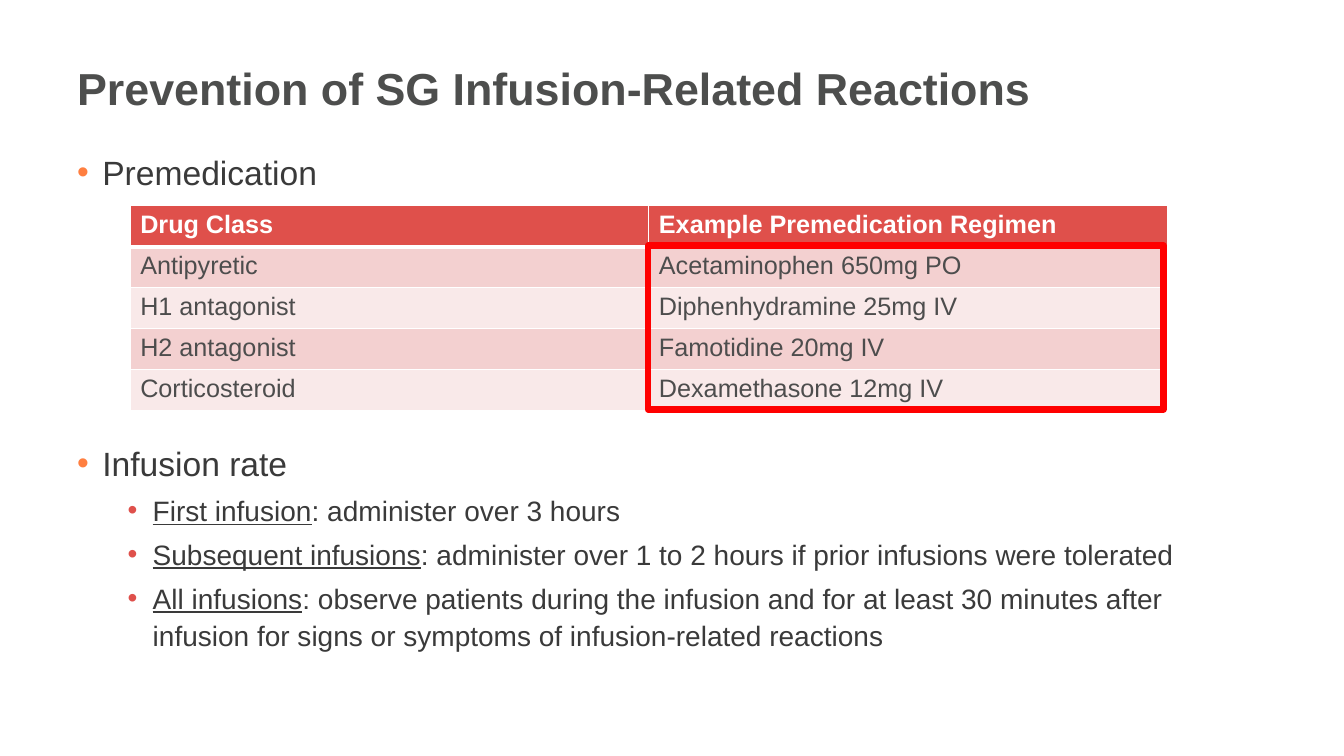
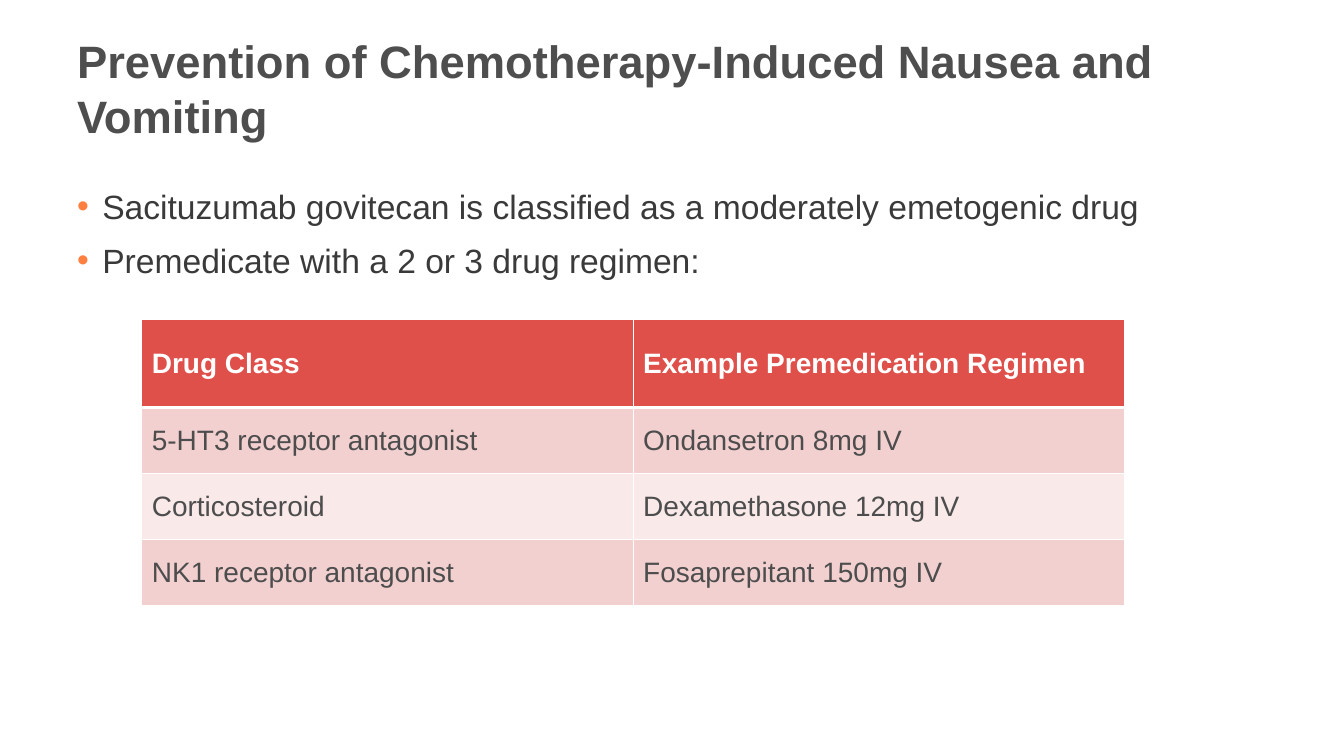
from lxml import etree
from pptx import Presentation
from pptx.dml.color import RGBColor
from pptx.enum.shapes import MSO_SHAPE
from pptx.enum.text import MSO_ANCHOR
from pptx.oxml.ns import qn
from pptx.util import Emu, Pt

RECTANGLE = MSO_SHAPE.RECTANGLE
TOP, MIDDLE = MSO_ANCHOR.TOP, MSO_ANCHOR.MIDDLE

SCALE = 9525
FONT = "Arial"
WHITE = "FFFFFF"
TITLE_GREY = "4D4E4D"
BODY_GREY = "3A3A3A"
CELL_GREY = "4D4D4D"
ORANGE = "FF7F40"
RED = "DF504B"
BANDS = ("F3D0D0", "F9E9E9")
HIGHLIGHT = "FF0000"

TITLE_BOX = (64, 21, 1128, 125)
LEVELS = (
    {"size": 24, "before": 10, "margin": 24, "bullet": ORANGE},
    {"size": 20, "before": 5, "margin": 72, "bullet": RED},
)
HANGING = 24
HEADINGS = ("Drug Class", "Example Premedication Regimen")


def px(value):
    return Emu(value * SCALE)


def place(box):
    return [px(value) for value in box]


def rgb(value):
    return RGBColor.from_string(value)


def set_values(target, values):
    for name, value in values.items():
        setattr(target, name, value)


def style_font(font, size, color, **extra):
    set_values(font, {"name": FONT, "size": Pt(size), **extra})
    font.color.rgb = rgb(color)


def add_color(parent, value):
    fill = etree.SubElement(parent, qn("a:solidFill"))
    etree.SubElement(fill, qn("a:srgbClr"), val=value)


def add_frame(slide, box, anchor):
    frame = slide.shapes.add_textbox(*place(box)).text_frame
    set_values(frame, {"word_wrap": True, "vertical_anchor": anchor})
    return frame


def add_title(slide, text, size):
    paragraph = add_frame(slide, TITLE_BOX, MIDDLE).paragraphs[0]
    paragraph.text = text
    style_font(paragraph.runs[0].font, size, TITLE_GREY, bold=True)


def add_bullet(paragraph, level):
    properties = paragraph._p.get_or_add_pPr()
    properties.set("marL", str(px(level["margin"])))
    properties.set("indent", str(-px(HANGING)))
    color = etree.SubElement(properties, qn("a:buClr"))
    etree.SubElement(color, qn("a:srgbClr"), val=level["bullet"])
    etree.SubElement(properties, qn("a:buFont"), typeface=FONT)
    etree.SubElement(properties, qn("a:buChar"), char="•")


def add_bullets(slide, box, items, line_spacing):
    frame = add_frame(slide, box, TOP)
    for index, (depth, lead, rest) in enumerate(items):
        level = LEVELS[depth]
        paragraph = frame.add_paragraph() if index else frame.paragraphs[0]
        add_bullet(paragraph, level)
        set_values(paragraph, {
            "level": depth,
            "line_spacing": line_spacing,
            "space_before": Pt(level["before"] if index else 0),
        })
        for text, underline in ((lead, True), (rest, False)):
            if text:
                run = paragraph.add_run()
                run.text = text
                style_font(run.font, level["size"], BODY_GREY, underline=underline)


def add_borders(cell, top, bottom):
    properties = cell._tc.get_or_add_tcPr()
    for side, width in (("L", 1), ("R", 1), ("T", top), ("B", bottom)):
        line = etree.SubElement(properties, qn(f"a:ln{side}"), w=str(Pt(width)))
        add_color(line, WHITE)


def add_regimen(slide, origin, column_width, row_heights, drugs, size, anchor):
    rows = (HEADINGS, *drugs)
    box = (*origin, column_width * len(HEADINGS), sum(row_heights))
    table = slide.shapes.add_table(len(rows), len(HEADINGS), *place(box)).table
    for column in table.columns:
        column.width = px(column_width)
    for index, (texts, height) in enumerate(zip(rows, row_heights)):
        heading = index == 0
        table.rows[index].height = px(height)
        for cell, text in zip(table.rows[index].cells, texts):
            add_borders(cell, 3 if index == 1 else 1, 3 if heading else 1)
            cell.fill.solid()
            cell.fill.fore_color.rgb = rgb(RED if heading else BANDS[(index - 1) % 2])
            set_values(cell, {"text": text, "vertical_anchor": anchor})
            style_font(cell.text_frame.paragraphs[0].runs[0].font, size,
                       WHITE if heading else CELL_GREY, bold=heading)


def add_highlight(slide, box):
    outline = slide.shapes.add_shape(RECTANGLE, *place(box))
    outline.shadow.inherit = False
    outline.fill.background()
    outline.line.color.rgb = rgb(HIGHLIGHT)
    outline.line.width = Pt(4.5)


def build_reactions(slide):
    add_title(slide, "Prevention of SG Infusion-Related Reactions", 32)
    add_bullets(slide, (64, 136, 1128, 56), [(0, "", "Premedication")], 1.1)
    add_bullets(slide, (64, 413, 1128, 288), [
        (0, "", "Infusion rate"),
        (1, "First infusion", ": administer over 3 hours"),
        (1, "Subsequent infusions",
         ": administer over 1 to 2 hours if prior infusions were tolerated"),
        (1, "All infusions",
         ": observe patients during the infusion and for at least 30 minutes after "
         "infusion for signs or symptoms of infusion-related reactions"),
    ], 1.1)
    add_regimen(slide, (124, 196), 494, [39] * 5, [
        ("Antipyretic", "Acetaminophen 650mg PO"),
        ("H1 antagonist", "Diphenhydramine 25mg IV"),
        ("H2 antagonist", "Famotidine 20mg IV"),
        ("Corticosteroid", "Dexamethasone 12mg IV"),
    ], 18, TOP)
    add_highlight(slide, (617, 234, 491, 156))


def build_nausea(slide):
    add_title(slide, "Prevention of Chemotherapy-Induced Nausea and Vomiting", 32.4)
    add_bullets(slide, (64, 172, 1128, 120), [
        (0, "", "Sacituzumab govitecan is classified as a moderately emetogenic drug"),
        (0, "", "Premedicate with a 2 or 3 drug regimen:"),
    ], 1.0)
    add_regimen(slide, (135, 304), 468, [84, 63, 63, 63], [
        ("5-HT3 receptor antagonist", "Ondansetron 8mg IV"),
        ("Corticosteroid", "Dexamethasone 12mg IV"),
        ("NK1 receptor antagonist", "Fosaprepitant 150mg IV"),
    ], 20, MIDDLE)


def main():
    deck = Presentation()
    set_values(deck, {"slide_width": px(1280), "slide_height": px(720)})
    blank = deck.slide_layouts[6]
    for build in (build_reactions, build_nausea):
        build(deck.slides.add_slide(blank))
    deck.save("out.pptx")


if __name__ == "__main__":
    main()
